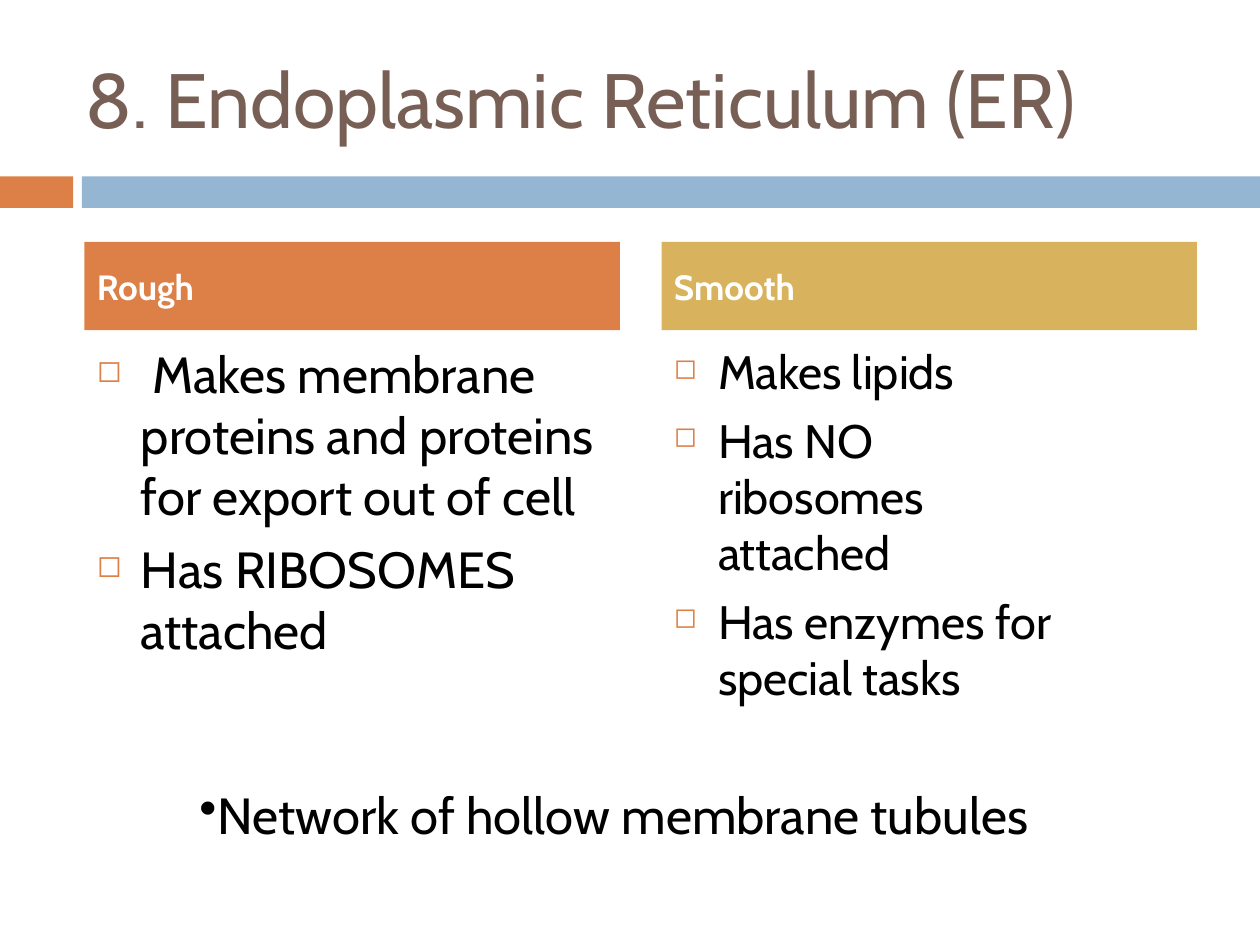
from lxml import etree
from pptx import Presentation
from pptx.dml.color import RGBColor
from pptx.enum.shapes import MSO_SHAPE
from pptx.enum.text import MSO_ANCHOR, PP_ALIGN
from pptx.oxml.ns import qn
from pptx.util import Inches, Pt

RECTANGLE = MSO_SHAPE.RECTANGLE
TOP, MIDDLE = MSO_ANCHOR.TOP, MSO_ANCHOR.MIDDLE
LEFT, CENTER = PP_ALIGN.LEFT, PP_ALIGN.CENTER

TITLE = "8. Endoplasmic Reticulum (ER)"
SUMMARY = "Network of hollow membrane tubules"
COLUMNS = [
    {
        "heading": "Rough",
        "color": "orange",
        "size": "rough",
        "height": 3.25,
        "points": [
            " Makes membrane proteins and proteins for export out of cell",
            "Has RIBOSOMES\vattached",
        ],
    },
    {
        "heading": "Smooth",
        "color": "gold",
        "size": "smooth",
        "height": 2.75,
        "points": [
            "Makes lipids",
            "Has NO \vribosomes \vattached",
            "Has enzymes for special tasks",
        ],
    },
]

THEME = {
    "font": "Cabin",
    "colors": {
        "orange": "DD8047",
        "blue": "94B6D2",
        "gold": "D8B25C",
        "brown": "775F55",
        "black": "000000",
        "white": "FFFFFF",
    },
    "sizes": {"title": 44, "heading": 20, "rough": 29, "smooth": 26.8, "summary": 29},
}

SLIDE_WIDTH, SLIDE_HEIGHT = 10, 7.5
BAND_TOP, BAND_HEIGHT = 1.4, 0.25
BAND_SPLIT, BAND_GAP = 0.58, 0.07
GRID_LEFT, COLUMN_WIDTH, COLUMN_GAP = 0.67, 4.25, 0.33
HEADING_TOP, HEADING_HEIGHT, BODY_TOP = 1.92, 0.7, 2.67
BULLET_INDENT = 0.35
SQUARE_BULLET = [
    ("a:buClr", {}),
    ("a:buSzPct", {"val": "60000"}),
    ("a:buChar", {"char": "◻"}),
]
ROUND_BULLET = [("a:buChar", {"char": "•"})]


def color(name):
    return RGBColor.from_string(THEME["colors"][name])


def apply(target, values):
    for name, value in values.items():
        setattr(target, name, value)


def add_block(page, area, fill):
    block = page.shapes.add_shape(RECTANGLE, *map(Inches, area))
    block.shadow.inherit = False
    block.fill.solid()
    block.fill.fore_color.rgb = color(fill)
    block.line.fill.background()
    return block


def add_bullet(para, bullet, indent):
    properties = para._p.get_or_add_pPr()
    properties.set("marL", str(Inches(indent)))
    properties.set("indent", str(-Inches(indent)))
    for tag, attributes in bullet:
        mark = etree.SubElement(properties, qn(tag), attributes)
        if tag == "a:buClr":
            etree.SubElement(mark, qn("a:srgbClr"), {"val": THEME["colors"]["orange"]})


def write(box, lines, size, ink="black", bold=False, anchor=TOP, align=LEFT,
          before=0, bullet=(), indent=0):
    frame = box.text_frame
    apply(frame, {"word_wrap": True, "vertical_anchor": anchor})
    for index, line in enumerate(lines):
        para = frame.add_paragraph() if index else frame.paragraphs[0]
        para.text = line
        apply(para, {"alignment": align, "space_before": Pt(before)})
        if bullet:
            add_bullet(para, bullet, indent)
        for span in para.runs:
            apply(span.font, {
                "name": THEME["font"],
                "size": Pt(THEME["sizes"][size]),
                "bold": bold,
            })
            span.font.color.rgb = color(ink)


def add_text(page, area, lines, size, **style):
    write(page.shapes.add_textbox(*map(Inches, area)), lines, size, **style)


def add_column(page, index, column):
    left = GRID_LEFT + index * (COLUMN_WIDTH + COLUMN_GAP)
    heading = add_block(
        page, (left, HEADING_TOP, COLUMN_WIDTH, HEADING_HEIGHT), column["color"])
    write(heading, [column["heading"]], "heading", ink="white", bold=True,
          anchor=MIDDLE, before=7)
    add_text(page, (left, BODY_TOP, COLUMN_WIDTH, column["height"]),
             column["points"], column["size"], before=7,
             bullet=SQUARE_BULLET, indent=BULLET_INDENT)


def main():
    deck = Presentation()
    apply(deck, {"slide_width": Inches(SLIDE_WIDTH), "slide_height": Inches(SLIDE_HEIGHT)})
    page = deck.slides.add_slide(deck.slide_layouts[6])
    band_left = BAND_SPLIT + BAND_GAP
    add_block(page, (0, BAND_TOP, BAND_SPLIT, BAND_HEIGHT), "orange")
    add_block(page, (band_left, BAND_TOP, SLIDE_WIDTH - band_left, BAND_HEIGHT), "blue")
    add_text(page, (BAND_SPLIT, 0.3, 8.92, 0.95), [TITLE], "title",
             ink="brown", anchor=MIDDLE)
    for index, column in enumerate(COLUMNS):
        add_column(page, index, column)
    add_text(page, (0.5, 6.17, 8.75, 0.59), [SUMMARY], "summary",
             align=CENTER, bullet=ROUND_BULLET)
    deck.save("out.pptx")


if __name__ == "__main__":
    main()
